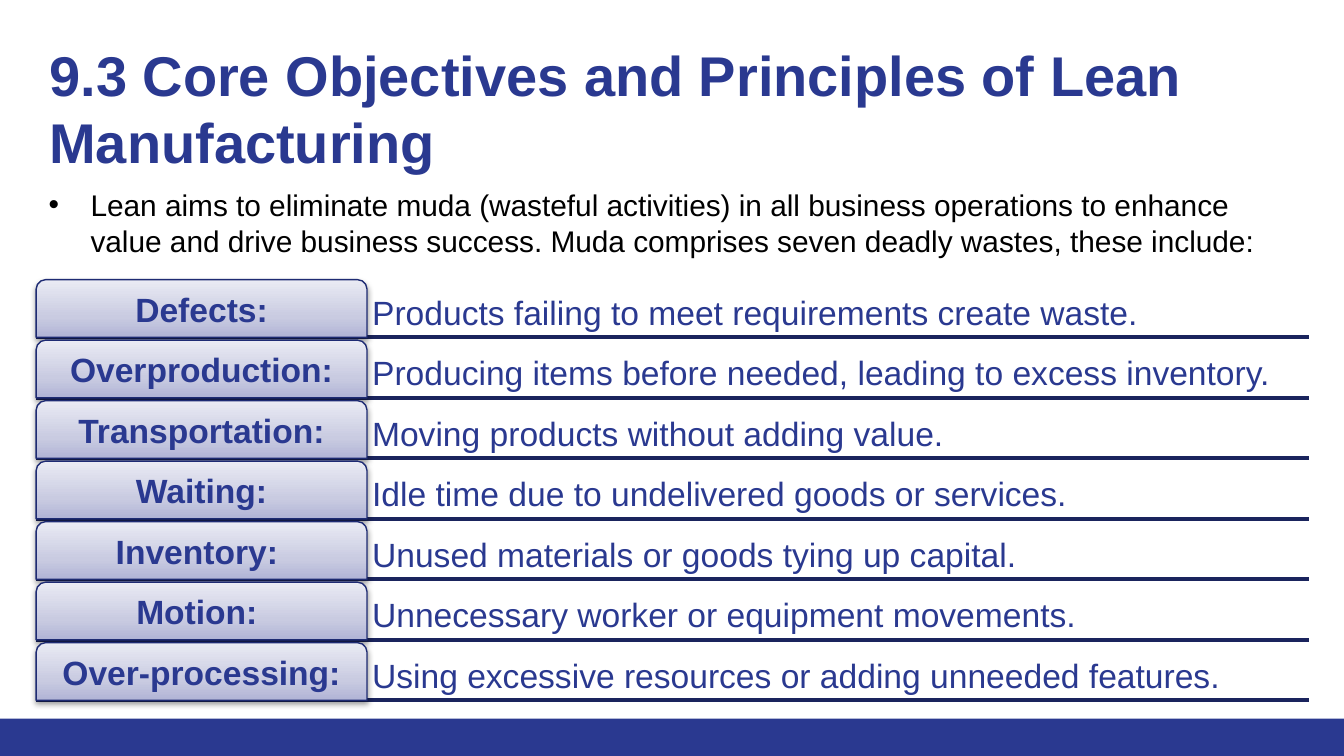
from dataclasses import dataclass

from pptx import Presentation
from pptx.dml.color import RGBColor
from pptx.enum.shapes import MSO_CONNECTOR, MSO_SHAPE
from pptx.enum.text import MSO_ANCHOR, PP_ALIGN
from pptx.oxml import parse_xml
from pptx.oxml.ns import nsdecls, qn
from pptx.util import Pt


@dataclass(frozen=True)
class Theme:
    """Colours, font and type sizes of the deck."""
    brand: str = "2A3990"
    rule: str = "1A245D"
    outline: str = "1E2B73"
    ink: str = "000000"
    gradient: tuple = ((0, "B1B4D6"), (35, "C9CBE1"), (100, "EAEBF4"))
    font: str = "Arial"
    title_size: int = 30
    intro_size: int = 16
    row_size: int = 18


THEME = Theme()

WASTES = [
    ("Defects:", "Products failing to meet requirements create waste."),
    ("Overproduction:", "Producing items before needed, leading to excess inventory."),
    ("Transportation:", "Moving products without adding value."),
    ("Waiting:", "Idle time due to undelivered goods or services."),
    ("Inventory: ", "Unused materials or goods tying up capital."),
    ("Motion: ", "Unnecessary worker or equipment movements."),
    ("Over-processing:", "Using excessive resources or adding unneeded features."),
]


def fill_text(shape, text, size, colour, bold=False, insets=(7.2, 3.6, 7.2, 3.6), anchor=MSO_ANCHOR.TOP):
    """Write one styled run into a shape and return its paragraph."""
    frame = shape.text_frame
    frame.word_wrap = True
    frame.vertical_anchor = anchor
    frame.margin_left, frame.margin_top, frame.margin_right, frame.margin_bottom = map(Pt, insets)
    para = frame.paragraphs[0]
    span = para.add_run()
    span.text = text
    span.font.name = THEME.font
    span.font.size = Pt(size)
    span.font.bold = bold
    span.font.color.rgb = RGBColor.from_string(colour)
    return para


def add_footer(page, left, top, width, height):
    """Draw the solid band along the foot of the page."""
    band = page.shapes.add_shape(MSO_SHAPE.RECTANGLE, Pt(left), Pt(top), Pt(width), Pt(height))
    band.shadow.inherit = False
    band.fill.solid()
    band.fill.fore_color.rgb = RGBColor.from_string(THEME.brand)
    band.line.fill.background()


def add_title(page, left, top, width, height):
    """Write the page title."""
    box = page.shapes.add_textbox(Pt(left), Pt(top), Pt(width), Pt(height))
    fill_text(box, "9.3 Core Objectives and Principles of Lean Manufacturing",
              THEME.title_size, THEME.brand, True, (7.2,) * 4)


def add_intro(page, left, top, width, height):
    """Write the bulleted introduction."""
    box = page.shapes.add_textbox(Pt(left), Pt(top), Pt(width), Pt(height))
    para = fill_text(box, "Lean aims to eliminate muda (wasteful activities) in all business operations "
                     "to enhance value and drive business success. Muda comprises seven deadly wastes, "
                     "these include:", THEME.intro_size, THEME.ink)
    properties = para._p.get_or_add_pPr()
    properties.set("marL", str(Pt(22.5)))
    properties.set("indent", str(-Pt(22.5)))
    properties.append(parse_xml(f'<a:buFont {nsdecls("a")} typeface="{THEME.font}"/>'))
    properties.append(parse_xml(f'<a:buChar {nsdecls("a")} char="•"/>'))


def add_rule(page, left, top, width):
    """Draw the line under a row."""
    rule = page.shapes.add_connector(MSO_CONNECTOR.STRAIGHT, Pt(left), Pt(top), Pt(left + width), Pt(top))
    rule.line.width = Pt(2)
    rule.line.color.rgb = RGBColor.from_string(THEME.rule)
    rule._element.spPr.append(parse_xml(f'<a:effectLst {nsdecls("a")}/>'))


def add_tab(page, label, left, top, width, height):
    """Draw a shaded tab with rounded top corners and its label."""
    tab = page.shapes.add_shape(MSO_SHAPE.ROUND_2_SAME_RECTANGLE, Pt(left), Pt(top), Pt(width), Pt(height))
    tab.line.width = Pt(0.75)
    tab.line.color.rgb = RGBColor.from_string(THEME.outline)
    tab.shadow.inherit = False
    stops = "".join(f'<a:gs pos="{place * 1000}"><a:srgbClr val="{colour}"/></a:gs>'
                    for place, colour in THEME.gradient)
    properties = tab._element.spPr
    properties.find(qn("a:prstGeom")).addnext(parse_xml(
        f'<a:gradFill {nsdecls("a")} rotWithShape="1"><a:gsLst>{stops}</a:gsLst>'
        '<a:lin ang="16200000" scaled="0"/></a:gradFill>'))
    properties.find(qn("a:effectLst")).append(parse_xml(
        f'<a:outerShdw {nsdecls("a")} blurRad="{Pt(3.1)}" dist="{Pt(1.6)}" dir="5400000" rotWithShape="0">'
        '<a:srgbClr val="000000"><a:alpha val="38000"/></a:srgbClr></a:outerShdw>'))
    para = fill_text(tab, label, THEME.row_size, THEME.brand, True, (4.3, 4.3, 4.3, 2.9), MSO_ANCHOR.MIDDLE)
    para.alignment = PP_ALIGN.CENTER
    para.line_spacing = 0.9


def add_waste_list(page, left, top, width, height):
    """Stack one ruled row per waste, a tab beside its description."""
    gap = 1.5
    tab_width = width * 0.26
    row_height = (height - gap * (len(WASTES) - 1)) / len(WASTES)
    tops = [top + index * (row_height + gap) for index in range(len(WASTES))]
    for row_top in tops:
        add_rule(page, left, row_top + row_height, width)
    for row_top, (label, description) in zip(tops, WASTES):
        box = page.shapes.add_textbox(Pt(left + tab_width), Pt(row_top), Pt(width - tab_width), Pt(row_height))
        para = fill_text(box, description, THEME.row_size, THEME.brand,
                         insets=(2.7,) * 4, anchor=MSO_ANCHOR.BOTTOM)
        para.line_spacing = 0.9
        add_tab(page, label, left, row_top, tab_width, row_height)


def main():
    """Build the deck and save it."""
    deck = Presentation()
    deck.slide_width, deck.slide_height = Pt(720), Pt(405)
    page = deck.slides.add_slide(deck.slide_layouts[6])
    add_footer(page, 0, 385, 720, 20)
    add_title(page, 19.4, 14.4, 682.5, 64)
    add_intro(page, 18.9, 96.5, 682.5, 46)
    add_waste_list(page, 19.4, 149.8, 681.8, 325.4 - 100)
    deck.save("out.pptx")


if __name__ == "__main__":
    main()
